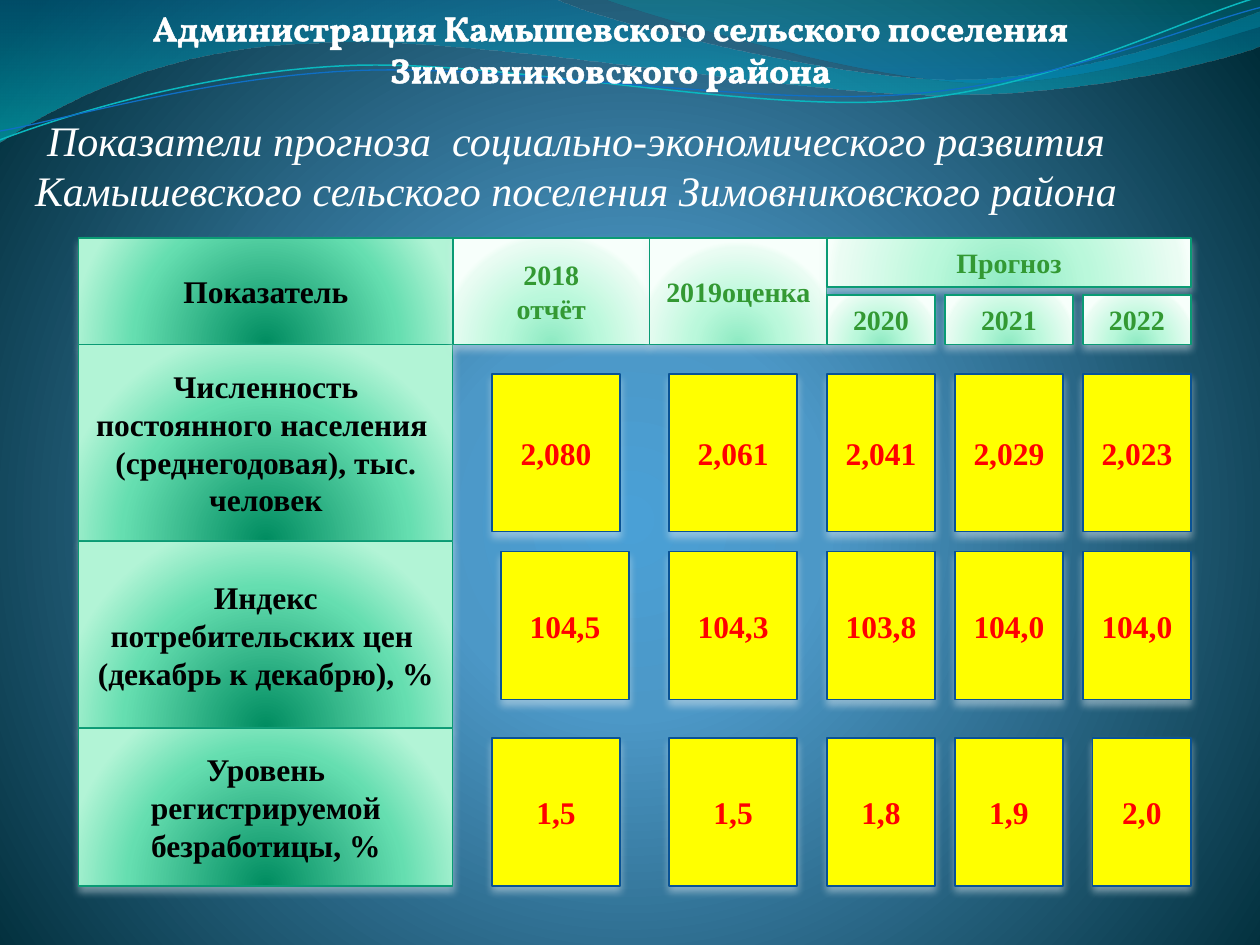
import math
from dataclasses import dataclass
from typing import Optional

from lxml import etree
from pptx import Presentation
from pptx.dml.color import RGBColor
from pptx.enum.shapes import MSO_SHAPE
from pptx.enum.text import MSO_ANCHOR, MSO_AUTO_SIZE, PP_ALIGN
from pptx.oxml.ns import qn
from pptx.util import Cm, Pt

RECT = MSO_SHAPE.RECTANGLE
CENTER = PP_ALIGN.CENTER
TOP, MIDDLE = MSO_ANCHOR.TOP, MSO_ANCHOR.MIDDLE
NO_FIT = MSO_AUTO_SIZE.NONE

WHITE = RGBColor(0xFF, 0xFF, 0xFF)
BLACK = RGBColor(0, 0, 0)
RED = RGBColor(0xFF, 0, 0)
YELLOW = RGBColor(0xFF, 0xFF, 0)
GREEN = RGBColor(0x33, 0x99, 0x33)
GREEN_LINE = RGBColor(0x0A, 0x9B, 0x74)
BLUE_LINE = RGBColor(0x09, 0x52, 0x95)
WAVE_TEAL = RGBColor(0x0A, 0xB8, 0xBF)
WAVE_BLUE = RGBColor(0x0F, 0x6F, 0xC6)
GLOW = RGBColor(0xE0, 0xEA, 0xF0)

SERIF = "Times New Roman"
HEADING = "Vollkorn"
CM_PER_INCH = 2.54
WAVE_CENTER = (4.99, 0.58)


@dataclass(frozen=True)
class Gradient:
    stops: tuple
    focus: Optional[tuple] = None


@dataclass(frozen=True)
class Style:
    fill: object
    line: RGBColor
    color: RGBColor
    size: int


@dataclass(frozen=True)
class Box:
    text: str
    left: float
    top: float
    width: float
    height: float


@dataclass(frozen=True)
class Wave:
    start: tuple
    segments: tuple
    fill: Optional[Gradient] = None
    line: Optional[RGBColor] = None
    weight: float = 0
    tilt: float = 0


BOTTOM = (50, 130, 50, -30)
BACKDROP = Gradient(((0, "4AA0D6", 100), (25, "4C98C7", 100), (100, "002C38", 100)),
                    (10, 110, 10, 100))
DEEP = Gradient(((0, "008C60", 100), (68, "65DEB0", 100), (100, "B2F4D6", 100)), BOTTOM)
PALE = Gradient(((0, "8DEAC2", 100), (43, "BAF8DB", 100), (93, "EAFCF3", 100),
                 (100, "F7FFFB", 100)), BOTTOM)

LABEL = Style(DEEP, GREEN_LINE, BLACK, 18)
HEADER = Style(PALE, GREEN_LINE, GREEN, 16)
VALUE = Style(YELLOW, BLUE_LINE, RED, 18)

WAVES = (
    Wave((0, 0), ((4.4, -0.01), (4.76, 0.17, 6.64, 0.63, 7.58, 0.63),
                  (8.53, 0.63, 9.58, 0.26, 10, 0.09), (10.01, 0.36),
                  (9.83, 0.44, 8.7, 0.76, 7.46, 0.75), (6.22, 0.75, 3.82, 0.28, 2.57, 0.34),
                  (1.29, 0.36, 0.46, 0.83, -0.01, 1.13)),
         fill=Gradient(((0, "0074A1", 45), (100, "00C6CF", 55)))),
    Wave((4.79, -0.01), ((5.09, 0.11, 6.82, 0.62, 7.69, 0.65),
                         (8.56, 0.69, 9.61, 0.32, 10, 0.21), (10, 0)),
         fill=Gradient(((0, "00A1A9", 30), (80, "008BBF", 45)))),
    Wave((0, 1.11), ((0.48, 0.93, 1.58, 0.57, 2.77, 0.52), (3.95, 0.47, 5.93, 0.89, 7.13, 0.8),
                     (8.33, 0.71, 9.38, 0.15, 9.98, -0.02)),
         line=WAVE_TEAL, weight=0.85, tilt=-2.7),
    Wave((0, 1.04), ((0.47, 0.96, 1.64, 0.61, 2.83, 0.56), (4.03, 0.51, 5.97, 0.84, 7.17, 0.75),
                     (8.36, 0.67, 9.41, 0.21, 10, 0.06)),
         line=WAVE_BLUE, weight=0.75, tilt=-2.7),
)

LABELS = (
    ("Показатель", 2.14),
    ("Численность постоянного населения \n(среднегодовая), тыс. человек", 3.97),
    ("Индекс потребительских цен \n(декабрь к декабрю), %", 3.77),
    ("Уровень регистрируемой безработицы, %", 3.18),
)
HEADERS = (
    Box("2018\nотчёт", 9.13, 4.8, 3.97, 2.14),
    Box("2019оценка", 13.1, 4.8, 3.57, 2.14),
    Box("Прогноз", 16.67, 4.8, 7.34, 0.99),
    Box("2020", 16.67, 5.95, 2.18, 0.99),
    Box("2021", 19.05, 5.95, 2.58, 0.99),
    Box("2022", 21.83, 5.95, 2.18, 0.99),
)
COLUMNS = ((9.92, 2.58), (13.49, 2.58), (16.67, 2.18), (19.25, 2.18), (21.83, 2.18))
ROWS = (
    (7.54, 3.18, ("2,080", "2,061", "2,041", "2,029", "2,023")),
    (11.12, 2.98, ("104,5", "104,3", "103,8", "104,0", "104,0")),
    (14.88, 2.98, ("1,5", "1,5", "1,8", "1,9", "2,0")),
)
SHIFTED = {(1, 0): (10.1, 2.58), (2, 4): (22.03, 1.98)}


def child(parent, tag: str, **attrs):
    return etree.SubElement(parent, qn(tag), {k: str(v) for k, v in attrs.items()})


def set_gradient(fill, props, gradient: Gradient) -> None:
    fill.background()
    grad = etree.Element(qn("a:gradFill"), rotWithShape="1")
    stops = child(grad, "a:gsLst")
    for pos, color, opacity in gradient.stops:
        clr = child(child(stops, "a:gs", pos=pos * 1000), "a:srgbClr", val=color)
        if opacity < 100:
            child(clr, "a:alpha", val=opacity * 1000)
    if gradient.focus:
        sides = {k: v * 1000 for k, v in zip("ltrb", gradient.focus)}
        child(child(grad, "a:path", path="circle"), "a:fillToRect", **sides)
    else:
        child(grad, "a:lin", ang=5400000, scaled=0)
    props.replace(props.find(qn("a:noFill")), grad)


def add_glow(sp) -> None:
    sp.shadow.inherit = False
    effects = sp._element.spPr.find(qn("a:effectLst"))
    shadow = child(effects, "a:outerShdw", blurRad=Pt(4.5), dist=Pt(3), dir=5400000,
                   algn="ctr", rotWithShape=0)
    child(child(shadow, "a:srgbClr", val=GLOW), "a:alpha", val=48000)


def write(sp, text: str, font: str, size: int, color: RGBColor, anchor,
          bold: bool = False, italic: bool = False) -> None:
    tf = sp.text_frame
    tf.word_wrap = True
    tf.auto_size = NO_FIT
    tf.vertical_anchor = anchor
    tf.text = text
    for p in tf.paragraphs:
        p.alignment = CENTER
        p.font.name, p.font.size = font, Pt(size)
        p.font.bold, p.font.italic = bold, italic
        p.font.color.rgb = color


def add_box(s, box: Box, style: Style) -> None:
    sp = s.shapes.add_shape(RECT, Cm(box.left), Cm(box.top), Cm(box.width), Cm(box.height))
    if isinstance(style.fill, Gradient):
        set_gradient(sp.fill, sp._element.spPr, style.fill)
    else:
        sp.fill.solid()
        sp.fill.fore_color.rgb = style.fill
    sp.line.color.rgb = style.line
    sp.line.width = Pt(0.75)
    add_glow(sp)
    write(sp, box.text, SERIF, style.size, style.color, MIDDLE, bold=True)


def level(point: tuple, tilt: float) -> tuple:
    angle = math.radians(-tilt)
    cx, cy = WAVE_CENTER
    dx, dy = point[0] - cx, point[1] - cy
    x = cx + dx * math.cos(angle) - dy * math.sin(angle)
    y = cy + dx * math.sin(angle) + dy * math.cos(angle)
    return Cm(x * CM_PER_INCH), Cm(y * CM_PER_INCH)


def add_wave(s, wave: Wave) -> None:
    points = [level(seg[i:i + 2], wave.tilt)
              for seg in wave.segments for i in range(0, len(seg), 2)]
    builder = s.shapes.build_freeform(*level(wave.start, wave.tilt))
    builder.add_line_segments(points, close=wave.fill is not None)
    sp = builder.convert_to_shape()
    lines = iter(list(sp._element.iter(qn("a:lnTo"))))
    for seg in wave.segments:
        first = next(lines)
        if len(seg) == 6:
            first.tag_name = None
            curve = etree.Element(qn("a:cubicBezTo"))
            first.addprevious(curve)
            for line in (first, next(lines), next(lines)):
                curve.append(line[0])
                line.getparent().remove(line)
    sp.rotation = wave.tilt
    sp.shadow.inherit = False
    if wave.fill:
        set_gradient(sp.fill, sp._element.spPr, wave.fill)
        sp.line.fill.background()
    else:
        sp.fill.background()
        sp.line.color.rgb = wave.line
        sp.line.width = Pt(wave.weight)


def add_title(s) -> None:
    sp = s.shapes.title
    sp.left, sp.top, sp.width, sp.height = Cm(0.7), Cm(0), Cm(23.22), Cm(1.96)
    write(sp, "Администрация Камышевского сельского поселения Зимовниковского района",
          HEADING, 20, WHITE, TOP, bold=True)
    r = sp.text_frame.paragraphs[0].runs[0]
    outline = child(r._r.get_or_add_rPr(), "a:ln", w=Pt(1.45))
    child(child(outline, "a:solidFill"), "a:srgbClr", val=WHITE)
    s.shapes._spTree.append(sp._element)


def main() -> None:
    prs = Presentation()
    prs.slide_width, prs.slide_height = Cm(25.4), Cm(19.05)
    s = prs.slides.add_slide(prs.slide_layouts[5])
    bg_fill = s.background.fill
    bg_fill.background()
    set_gradient(bg_fill, s._element.find(".//" + qn("p:bgPr")), BACKDROP)
    for wave in WAVES:
        add_wave(s, wave)
    subtitle = s.shapes.add_textbox(Cm(0), Cm(2.18), Cm(23.22), Cm(2.31))
    write(subtitle, "Показатели прогноза  социально-экономического развития "
          "Камышевского сельского поселения Зимовниковского района",
          SERIF, 24, WHITE, TOP, italic=True)
    top = 4.8
    for text, height in LABELS:
        add_box(s, Box(text, 1.59, top, 7.54, height), LABEL)
        top += height
    for header in HEADERS:
        add_box(s, header, HEADER)
    for i, (top, height, values) in enumerate(ROWS):
        for j, text in enumerate(values):
            left, width = SHIFTED.get((i, j), COLUMNS[j])
            add_box(s, Box(text, left, top, width, height), VALUE)
    add_title(s)
    prs.save("out.pptx")


if __name__ == "__main__":
    main()
